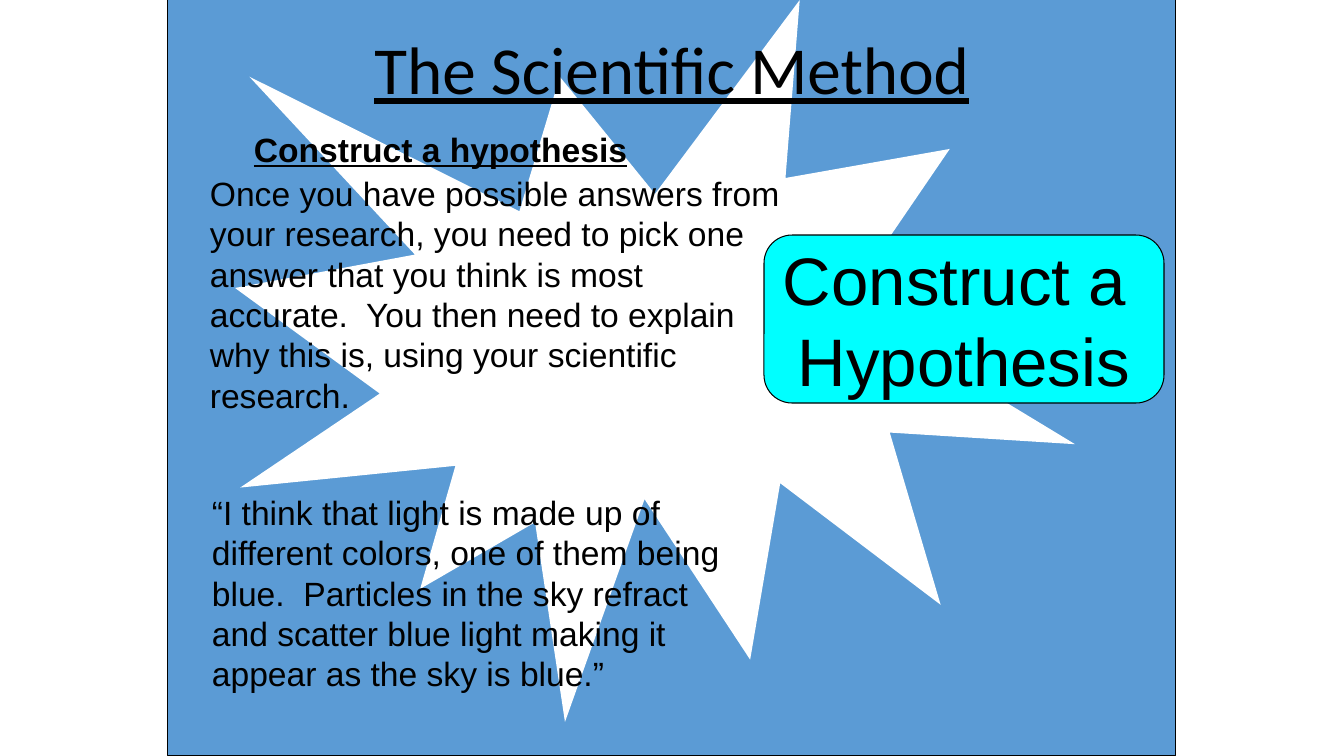
import pptx
import pptx.util
import pptx.dml.color
import pptx.enum.shapes
import pptx.enum.text

PX = 914400 / 100.8
COLORS = {"sky": "5B9BD5", "burst": "FFFFFF", "step": "00FFFF", "ink": "000000"}
SHAPE = pptx.enum.shapes.MSO_SHAPE
ANCHOR = pptx.enum.text.MSO_ANCHOR
CENTER = pptx.enum.text.PP_ALIGN.CENTER
LEFT = pptx.enum.text.PP_ALIGN.LEFT


def px(*lengths):
    return [pptx.util.Emu(round(length * PX)) for length in lengths]


def write(paragraph, words, size, align=LEFT, font="Arial", bold=False, underline=False):
    paragraph.alignment = align
    run = paragraph.add_run()
    run.text = words
    run.font.name = font
    run.font.size = pptx.util.Pt(size)
    run.font.bold = bold
    run.font.underline = underline
    run.font.color.rgb = pptx.dml.color.RGBColor.from_string(COLORS["ink"])


deck = pptx.Presentation()
deck.slide_width, deck.slide_height = px(1344, 756)
slide = deck.slides.add_slide(deck.slide_layouts[5])

panels = {}
for part, preset, box, outlined in [
    ("sky", SHAPE.RECTANGLE, (168, 0, 1008, 756), True),
    ("burst", SHAPE.EXPLOSION1, (235, 0, 840, 722), False),
    ("step", SHAPE.FLOWCHART_ALTERNATE_PROCESS, (764, 235, 400, 168), True),
]:
    panel = slide.shapes.add_shape(preset, *px(*box))
    panel.shadow.inherit = False
    panel.fill.solid()
    panel.fill.fore_color.rgb = pptx.dml.color.RGBColor.from_string(COLORS[part])
    if outlined:
        panel.line.color.rgb = pptx.dml.color.RGBColor.from_string(COLORS["ink"])
        panel.line.width = pptx.util.Pt(0.75)
    else:
        panel.line.fill.background()
    panels[part] = panel

title = slide.shapes.title
title.left, title.top, title.width, title.height = px(168, 31, 1008, 101)
title.text_frame.vertical_anchor = ANCHOR.TOP
title.text_frame.paragraphs[0].line_spacing = 0.9
write(title.text_frame.paragraphs[0], "The Scientific Method", 48, CENTER, "Calibri", underline=True)
panels["burst"].element.addnext(title.element)

step = panels["step"].text_frame
step.word_wrap = False
step.vertical_anchor = ANCHOR.MIDDLE
write(step.paragraphs[0], "Construct a ", 48, CENTER)
write(step.add_paragraph(), "Hypothesis", 48, CENTER)

for words, box, heading in [
    ("Construct a hypothesis", (244, 124, 394, 50), True),
    ("Once you have possible answers from your research, you need to pick one answer "
     "that you think is most accurate.  You then need to explain why this is, using "
     "your scientific research.", (200, 168, 596, 254), False),
    ("“I think that light is made up of different colors, one of them being blue.  "
     "Particles in the sky refract and scatter blue light making it appear as the sky "
     "is blue.”", (202, 487, 528, 214), False),
]:
    passage = slide.shapes.add_textbox(*px(*box)).text_frame
    passage.word_wrap = not heading
    passage.auto_size = pptx.enum.text.MSO_AUTO_SIZE.SHAPE_TO_FIT_TEXT
    write(passage.paragraphs[0], words, 24, bold=heading, underline=heading)

deck.save("out.pptx")
